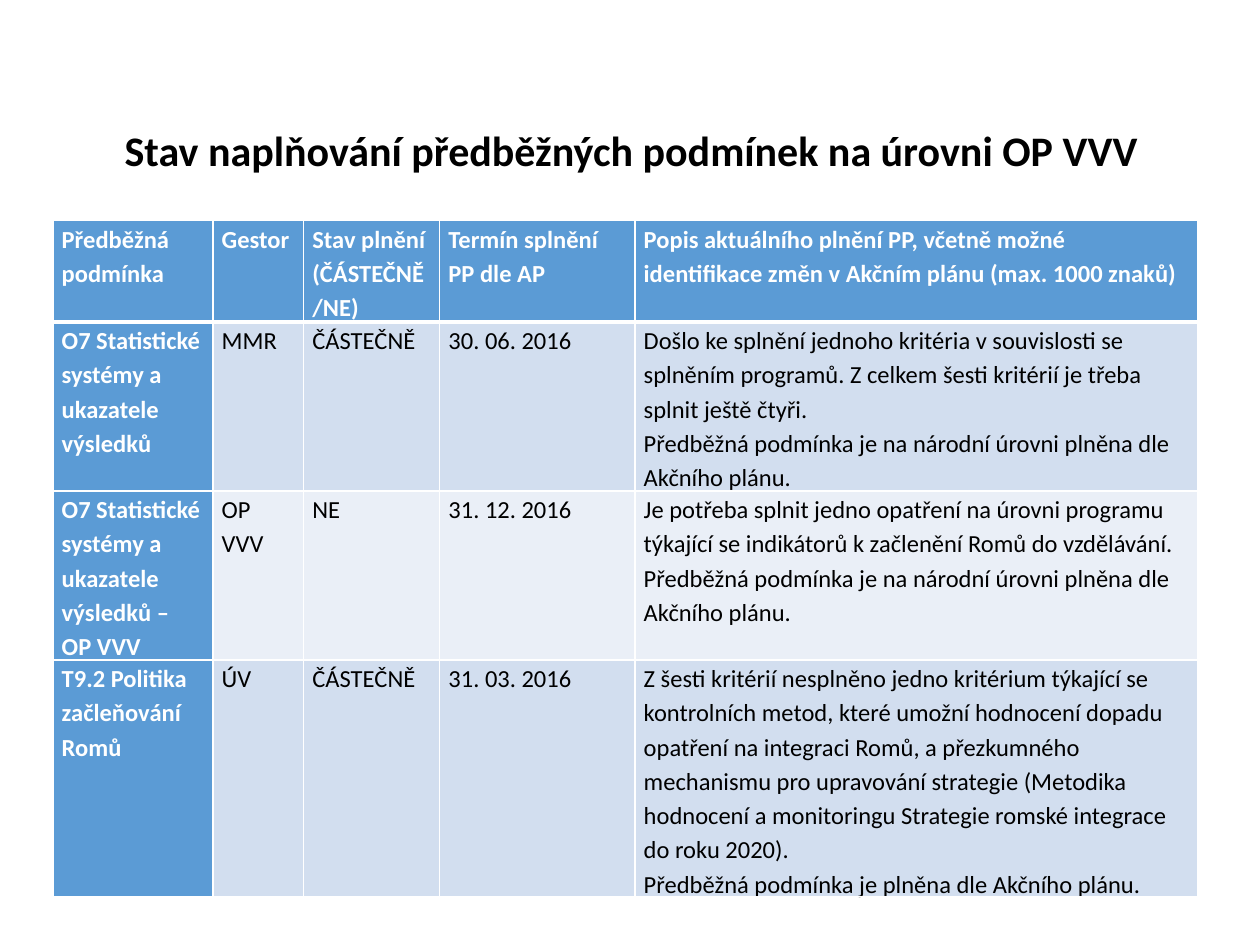
from dataclasses import dataclass
from typing import Any

from lxml import etree
from pptx import Presentation
from pptx import util as u
from pptx.dml.color import RGBColor
from pptx.enum import text
from pptx.oxml import ns

COLORS = {"ink": "000000", "paper": "FFFFFF", "head": "5B9BD5", "odd": "D2DEEF", "even": "EAEFF7"}
COLUMNS = [1.27, 0.72, 1.08, 1.55, 4.47]
ROWS = [0.71, 1.19, 1.19, 1.67]
JUSTIFIED = {(0, 0), (0, 2), (1, 2), (2, 2), (3, 2)}
NATIONAL = "Předběžná podmínka je na národní úrovni plněna dle Akčního plánu."
CONDITIONS = [
    ["Předběžná podmínka", "Gestor", "Stav plnění\n(ČÁSTEČNĚ/NE)", "Termín splnění PP dle AP",
     "Popis aktuálního plnění PP, včetně možné identifikace změn v Akčním plánu (max. 1000 znaků)"],
    ["O7 Statistické systémy a ukazatele výsledků", "MMR", "ČÁSTEČNĚ", "30. 06. 2016",
     "Došlo ke splnění jednoho kritéria v souvislosti se splněním programů. "
     f"Z celkem šesti kritérií je třeba splnit ještě čtyři.\n{NATIONAL}"],
    ["O7 Statistické systémy a ukazatele výsledků – OP VVV", "OP VVV", "NE", "31. 12. 2016",
     "Je potřeba splnit jedno opatření na úrovni programu týkající se indikátorů "
     f"k začlenění Romů do vzdělávání.\n{NATIONAL}"],
    ["T9.2 Politika začleňování Romů", "ÚV", "ČÁSTEČNĚ", "31. 03. 2016",
     "Z šesti kritérií nesplněno jedno kritérium týkající se kontrolních metod, které umožní "
     "hodnocení dopadu opatření na integraci Romů, a přezkumného mechanismu pro upravování "
     "strategie (Metodika hodnocení a monitoringu Strategie romské integrace do roku 2020).\n"
     "Předběžná podmínka je plněna dle Akčního plánu."],
]


@dataclass
class SlideBuilder:
    """Draws styled elements on the current slide."""

    page: Any
    font: str = "Calibri"

    def fill_text(self, frame, content, size, color, bold, align, spacing):
        frame.text = content
        for para in frame.paragraphs:
            para.alignment = align
            para.line_spacing = spacing
            for span in para.runs:
                formats = {"name": self.font, "size": u.Pt(size), "bold": bold}
                for name, value in formats.items():
                    setattr(span.font, name, value)
                span.font.color.rgb = RGBColor.from_string(COLORS[color])

    def title(self, content, left, top, width, height):
        box = self.page.shapes.add_textbox(*map(u.Inches, (left, top, width, height)))
        formats = {"word_wrap": True, "vertical_anchor": text.MSO_ANCHOR.MIDDLE}
        for name, value in formats.items():
            setattr(box.text_frame, name, value)
        self.fill_text(box.text_frame, content, 24, "ink", True, text.PP_ALIGN.CENTER, 0.9)

    def border(self, cell, side, points):
        properties = cell._tc.get_or_add_tcPr()
        line = etree.SubElement(properties, ns.qn(f"a:ln{side}"), w=str(u.Pt(points)))
        fill = etree.SubElement(line, ns.qn("a:solidFill"))
        etree.SubElement(fill, ns.qn("a:srgbClr"), val=COLORS["paper"])

    def cell(self, cell, content, row, column):
        heading = row == 0 or column == 0
        margins = {"margin_left": 0.07, "margin_right": 0.07, "margin_top": 0, "margin_bottom": 0}
        for name, value in margins.items():
            setattr(cell, name, u.Inches(value))
        thick = {(0, "B"), (1, "T")}
        for side in "LRTB":
            self.border(cell, side, 3 if (row, side) in thick else 1)
        fill = "head" if heading else "odd" if row % 2 else "even"
        cell.fill.solid()
        cell.fill.fore_color.rgb = RGBColor.from_string(COLORS[fill])
        align = text.PP_ALIGN.JUSTIFY if (row, column) in JUSTIFIED else text.PP_ALIGN.LEFT
        self.fill_text(cell.text_frame, content, 14, "paper" if heading else "ink", heading, align, 1.15)

    def table(self, rows, left, top, widths, heights):
        area = map(u.Inches, (left, top, sum(widths), sum(heights)))
        table = self.page.shapes.add_table(len(rows), len(widths), *area).table
        for column, width in zip(table.columns, widths):
            column.width = u.Inches(width)
        for row, (height, contents) in enumerate(zip(heights, rows)):
            table.rows[row].height = u.Inches(height)
            for column, content in enumerate(contents):
                self.cell(table.cell(row, column), content, row, column)


def main():
    deck = Presentation()
    deck.slide_width, deck.slide_height = u.Inches(10), u.Inches(7.5)
    builder = SlideBuilder(deck.slides.add_slide(deck.slide_layouts[6]))
    builder.title("Stav naplňování předběžných podmínek na úrovni OP VVV", 0.51, 0.88, 9, 0.67)
    builder.table(CONDITIONS, 0.42, 1.75, COLUMNS, ROWS)
    deck.save("out.pptx")


if __name__ == "__main__":
    main()
